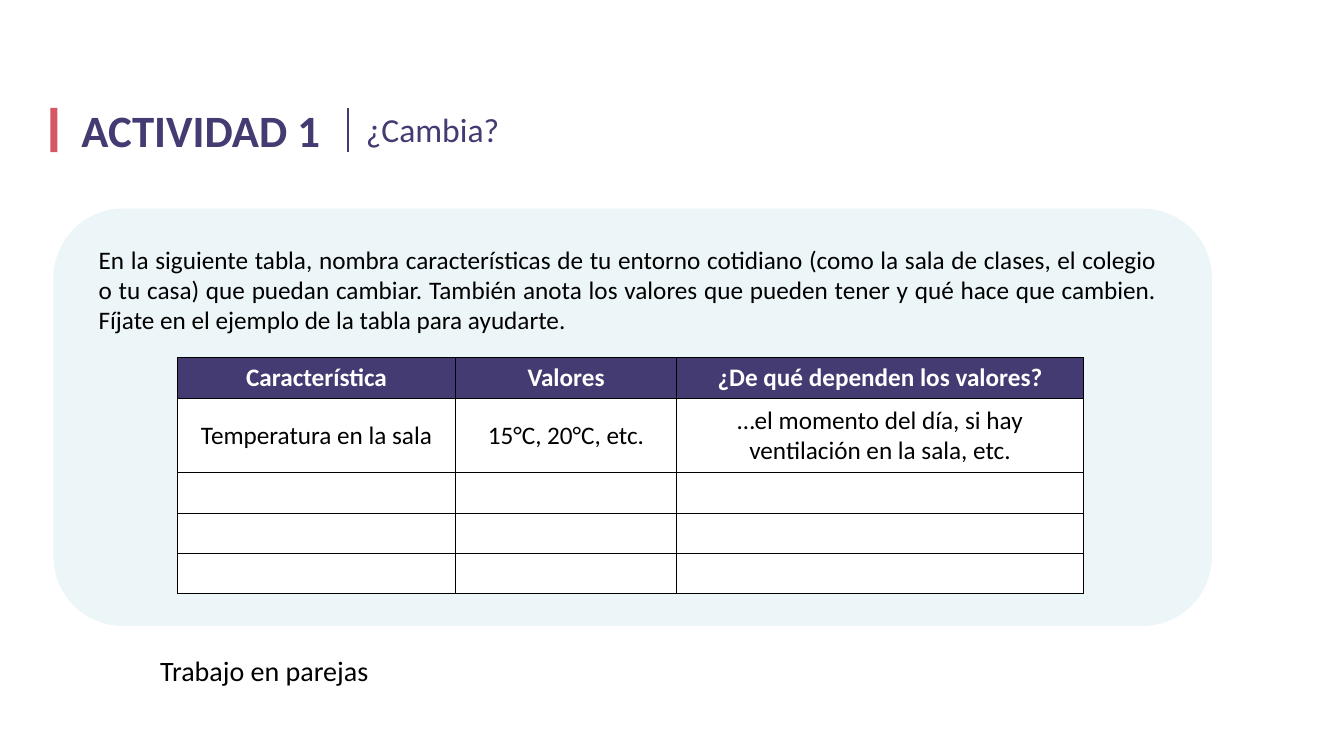
from lxml import etree
from pptx import Presentation, util as u
from pptx.dml.color import RGBColor
from pptx.enum import shapes, text
from pptx.oxml.ns import qn

INK = {"navy": "433B71", "red": "D65664", "pale": "ECF5F7", "white": "FFFFFF", "black": "000000"}
FONT = "Calibri"
TASK = ("En la siguiente tabla, nombra características de tu entorno cotidiano "
        "(como la sala de clases, el colegio o tu casa) que puedan cambiar. "
        "También anota los valores que pueden tener y qué hace que cambien. "
        "Fíjate en el ejemplo de la tabla para ayudarte.")
ROWS = [
    ["Característica", "Valores", "¿De qué dependen los valores?"],
    ["Temperatura en la sala", "15°C, 20°C, etc.",
     "…el momento del día, si hay ventilación en la sala, etc."],
] + [[""] * 3 for _ in range(3)]
COLS = [2.76, 2.19, 4.04]
HIGHS = [0.4, 0.74, 0.4, 0.4, 0.4]


def tint(name):
    """Return the named colour."""
    return RGBColor.from_string(INK[name])


def style(par, size, color, bold=False, align=text.PP_ALIGN.LEFT):
    """Format a paragraph and its runs."""
    par.alignment = align
    for run in par.runs:
        font = run.font
        font.name, font.size, font.bold = FONT, u.Pt(size), bold
        font.color.rgb = tint(color)


def block(slide, kind, box, color):
    """Draw a plain filled shape."""
    shape = slide.shapes.add_shape(kind, *map(u.Inches, box))
    shape.shadow.inherit = False
    shape.fill.solid()
    shape.fill.fore_color.rgb = tint(color)
    shape.line.fill.background()


def label(slide, box, words, size, color, wrap=True, **look):
    """Place a text box that grows with its text."""
    frame = slide.shapes.add_textbox(*map(u.Inches, box)).text_frame
    frame.word_wrap = wrap
    frame.auto_size = text.MSO_AUTO_SIZE.SHAPE_TO_FIT_TEXT
    frame.text = words
    style(frame.paragraphs[0], size, color, **look)


def edge(cell, width):
    """Give a cell four black borders."""
    props = cell._tc.get_or_add_tcPr()
    for spot, side in enumerate(["lnL", "lnR", "lnT", "lnB"]):
        line = etree.Element(qn("a:" + side), w=str(u.Pt(width)))
        fill = etree.SubElement(line, qn("a:solidFill"))
        etree.SubElement(fill, qn("a:srgbClr"), val=INK["black"])
        props.insert(spot, line)


def header(slide, x, y, high):
    """Draw the title row with its bar and divider."""
    block(slide, shapes.MSO_SHAPE.RECTANGLE, (x, y, 0.07, high), "red")
    label(slide, (x + 0.21, y - 0.1, 2.59, 0.64), "ACTIVIDAD 1", 32, "navy", wrap=False, bold=True)
    mid = u.Inches(x + 2.95)
    line = slide.shapes.add_connector(
        shapes.MSO_CONNECTOR.STRAIGHT, mid, u.Inches(y), mid, u.Inches(y + high))
    line.line.color.rgb = tint("navy")
    line.line.width = u.Pt(1.5)
    etree.SubElement(line._element.spPr, qn("a:effectLst"))
    label(slide, (x + 3.03, y - 0.04, 1.54, 0.5), "¿Cambia?", 24, "navy", wrap=False)


def grid(slide, x, y):
    """Draw the table of features and values."""
    box = map(u.Inches, (x, y, sum(COLS), sum(HIGHS)))
    table = slide.shapes.add_table(len(ROWS), len(COLS), *box).table
    for col, wide in zip(table.columns, COLS):
        col.width = u.Inches(wide)
    for r, (row, high) in enumerate(zip(ROWS, HIGHS)):
        table.rows[r].height = u.Inches(high)
        for c, words in enumerate(row):
            cell = table.cell(r, c)
            cell.fill.solid()
            cell.fill.fore_color.rgb = tint("white" if r else "navy")
            edge(cell, 1 if r < 2 else 0.75)
            cell.text = words
            style(cell.text_frame.paragraphs[0], 18, "black" if r else "white",
                  bold=r == 0, align=text.PP_ALIGN.CENTER)
            if r == 1:
                cell.vertical_anchor = text.MSO_ANCHOR.MIDDLE
                cell.margin_left = cell.margin_right = u.Inches(0.07)
                cell.margin_top = cell.margin_bottom = u.Inches(0.07)


def panel(slide, x, y, wide, high):
    """Draw the task panel with its text and table."""
    block(slide, shapes.MSO_SHAPE.ROUNDED_RECTANGLE, (x, y, wide, high), "pale")
    label(slide, (x + 0.35, y + 0.3, wide - 0.8, 1.31), TASK, 18, "black",
          align=text.PP_ALIGN.JUSTIFY)
    grid(slide, x + 1.23, y + 1.48)


def main():
    """Build and save the slide."""
    deck = Presentation()
    deck.slide_width, deck.slide_height = u.Inches(13.33), u.Inches(7.5)
    slide = deck.slides.add_slide(deck.slide_layouts[6])
    header(slide, 0.5, 1.07, 0.44)
    panel(slide, 0.53, 2.07, 11.49, 4.14)
    label(slide, (1.49, 6.43, 10.34, 0.44), "Trabajo en parejas", 20, "black",
          align=text.PP_ALIGN.JUSTIFY)
    deck.save("out.pptx")


if __name__ == "__main__":
    main()
